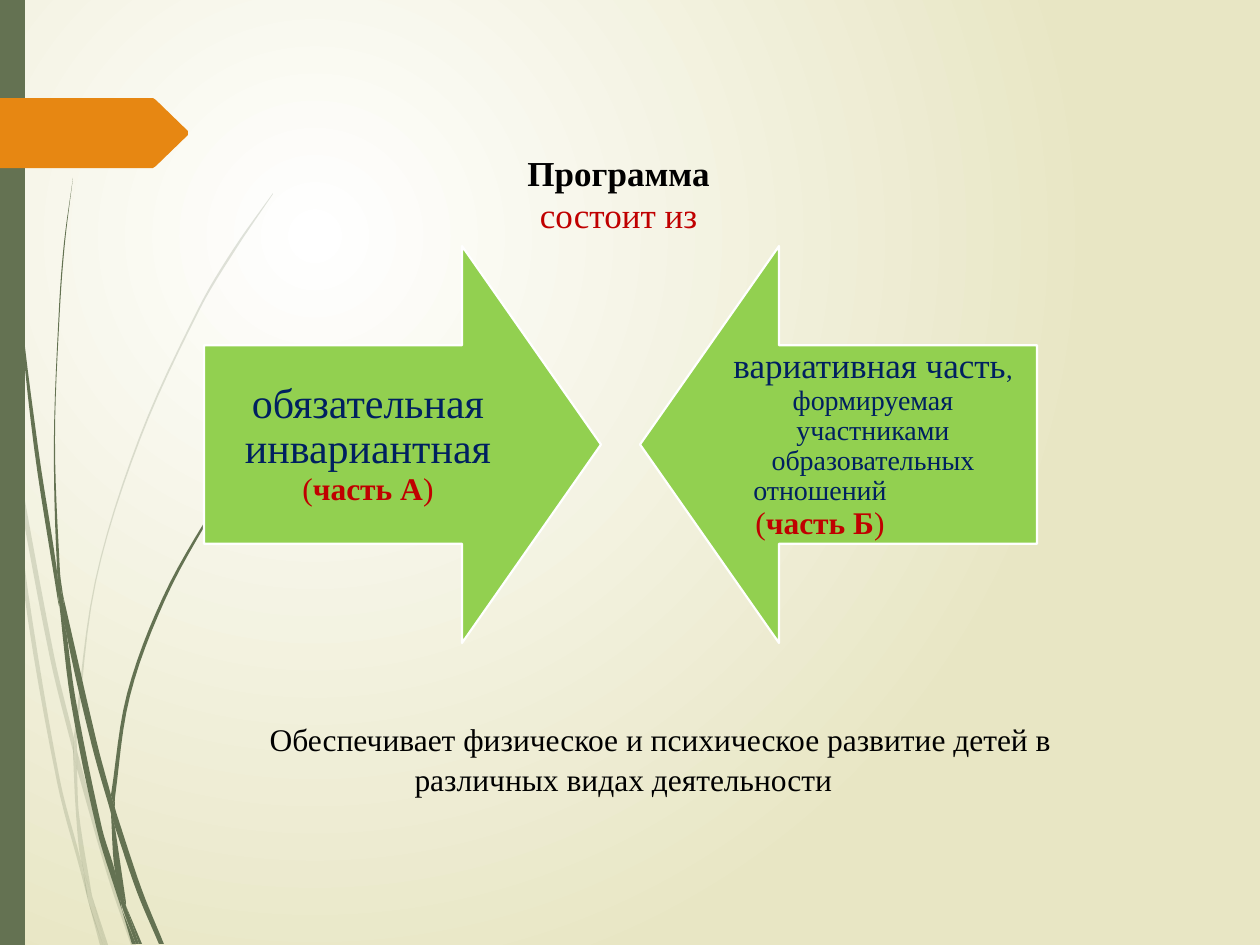
from dataclasses import dataclass
from math import dist

from lxml.etree import SubElement
from pptx import Presentation
from pptx.dml.color import RGBColor
from pptx.enum.shapes import MSO_SHAPE as Shape
from pptx.enum.text import MSO_ANCHOR as Anchor, MSO_AUTO_SIZE as AutoSize, PP_ALIGN as Align
from pptx.oxml.ns import qn
from pptx.util import Emu, Pt

PX_PER_INCH = 126
FONT = "Times New Roman"
COLORS = {
    "olive": "647252", "orange": "E78712", "green": "92D050", "white": "FFFFFF",
    "cream": "E8E6C4", "navy": "002060", "red": "C00000", "black": "000000",
}
Point = tuple[float, float]


@dataclass
class Blade:
    """A piece of grass bounded by two smooth edges, one running down and one up."""
    down: list[Point]
    up: list[Point]


@dataclass
class Run:
    text: str
    size: int
    color: str
    bold: bool = False


@dataclass
class Para:
    runs: list[Run]
    spacing: float = 1.0
    first_indent: int = 0
    right_margin: int = 0


@dataclass
class Arrow:
    left: int
    rotation: int
    text_left: int
    inset: int
    paras: list[Para]


PALE_BLADES = [
    Blade([(10, 441), (8, 406), (0, 355)], [(0, 377), (9, 433), (10, 441)]),
    Blade([(15, 474), (50, 658), (74, 755)], [(74, 738), (54, 655), (13, 435)]),
    Blade([(77, 769), (107, 874), (131, 945)], [(136, 945), (111, 872), (81, 765), (77, 751)]),
    Blade([(92, 896), (105, 945)], [(108, 945)]),
    Blade([(10, 441), (24, 592), (57, 782), (81, 873), (88, 900)],
          [(87, 891), (81, 861), (60, 780), (28, 591), (15, 474)]),
    Blade([(73, 755), (76, 814), (81, 861), (92, 896)], [(91, 890), (79, 814), (77, 769)]),
    Blade([(273, 193), (234, 248), (199, 307), (139, 438), (95, 581), (74, 736)],
          [(77, 751), (77, 736), (96, 582), (140, 440), (200, 309), (236, 249), (273, 194)]),
    Blade([(88, 900), (100, 945)], [(103, 945)]),
    Blade([(73, 755), (77, 769)], [(77, 751), (74, 738)]),
    Blade([(82, 861), (88, 900), (103, 945)], [(105, 945), (92, 896), (84, 872)]),
]
DARK_BLADES = [
    Blade([(3, 0), (6, 139), (18, 294), (34, 447), (58, 601)],
          [(59, 606), (57, 571), (38, 447), (19, 292), (8, 137), (4, 0)]),
    Blade([(63, 595), (67, 636), (92, 746), (111, 813)], [(111, 795), (97, 743), (63, 595)]),
    Blade([(115, 827), (137, 892), (159, 944)], [(164, 944), (142, 890), (118, 818), (115, 808)]),
    Blade([(59, 601), (71, 702), (97, 830), (116, 892), (122, 910)],
          [(121, 903), (115, 871), (102, 828), (76, 701), (67, 636)]),
    Blade([(73, 178), (64, 243), (59, 309), (54, 440), (57, 566), (62, 595)],
          [(63, 595), (60, 571), (55, 440), (60, 309), (65, 243), (73, 178)]),
    Blade([(126, 906), (139, 944)], [(142, 944)]),
    Blade([(57, 566), (59, 601), (67, 636)], [(63, 595), (62, 595)]),
    Blade([(271, 433), (241, 470), (212, 510), (163, 597), (127, 694), (111, 795)],
          [(115, 808), (115, 798), (130, 696), (165, 600), (213, 512), (241, 471), (272, 433)]),
    Blade([(122, 910), (132, 944)], [(136, 944)]),
    Blade([(111, 813), (115, 871), (126, 906)], [(126, 902), (115, 827)]),
    Blade([(111, 795), (111, 813), (115, 827)], [(115, 808)]),
    Blade([(115, 871), (121, 903), (136, 944)], [(139, 944), (126, 906)]),
]
TAG = [(0, 98), (153, 98), (156, 100), (188, 131), (188, 135), (156, 166), (153, 168), (0, 168)]

TITLE = [Para([Run("Программа ", 20, "black", True)]), Para([Run("состоит из ", 20, "red")])]
SUMMARY = [Para([Run("Обеспечивает физическое и психическое развитие детей в "
                     "различных видах деятельности", 18, "black")], 1.07, first_indent=74)]


def part_label(letter: str) -> list[Run]:
    return [Run("(", 18, "red"), Run(f"часть {letter}", 18, "red", True), Run(")", 18, "red")]


ARROWS = [
    Arrow(204, 270, 204, 24, [
        Para([Run("обязательная инвариантная ", 24, "navy"), *part_label("А")], 0.9)]),
    Arrow(640, 90, 709, 20, [
        Para([Run("вариативная часть", 20, "navy"), Run(", ", 15, "navy"),
              Run("формируемая участниками образовательных", 16, "navy")], 0.9),
        Para([Run("отношений", 16, "navy")], 0.9, right_margin=106),
        Para(part_label("Б"), 0.9)]),
]


def px(n: float) -> Emu:
    return Emu(round(n * 914400 / PX_PER_INCH))


def rgb(name: str) -> RGBColor:
    return RGBColor.from_string(COLORS[name])


def smooth(anchors: list[Point], steps: int = 6) -> list[Point]:
    """Points along a curve through the anchors, with tangents taken from their neighbours."""
    def tangent(i: int) -> Point:
        a, b = anchors[max(i - 1, 0)], anchors[min(i + 1, len(anchors) - 1)]
        length = dist(a, b)
        return (b[0] - a[0]) / length, (b[1] - a[1]) / length

    curve = [anchors[0]]
    for i, (a, b) in enumerate(zip(anchors, anchors[1:])):
        chord, ta, tb = dist(a, b), tangent(i), tangent(i + 1)
        for t in (k / steps for k in range(1, steps + 1)):
            wa, wb = 2 * t**3 - 3 * t**2 + 1, 3 * t**2 - 2 * t**3
            va, vb = chord * (t**3 - 2 * t**2 + t), chord * (t**3 - t**2)
            curve.append(tuple(wa * a[d] + wb * b[d] + va * ta[d] + vb * tb[d] for d in (0, 1)))
    return curve


def paint(sp, color: str, alpha: int = 100) -> None:
    sp.shadow.inherit = False
    sp.fill.solid()
    sp.fill.fore_color.rgb = rgb(color)
    sp.line.fill.background()
    if alpha < 100:
        clr = sp.fill._xPr.find(f".//{qn('a:srgbClr')}")
        SubElement(clr, qn("a:alpha"), val=str(alpha * 1000))


def draw_outline(shapes, points: list[Point], color: str, alpha: int = 100) -> None:
    (x, y), *rest = [(px(x), px(y)) for x, y in points]
    builder = shapes.build_freeform(x, y)
    builder.add_line_segments(rest, close=True)
    paint(builder.convert_to_shape(), color, alpha)


def place(sp, left: int, top: int, width: int, height: int) -> None:
    sp.left, sp.top, sp.width, sp.height = map(px, (left, top, width, height))


def write(tf, paras: list[Para]) -> None:
    tf.auto_size = AutoSize.NONE
    for i, para in enumerate(paras):
        p = tf.add_paragraph() if i else tf.paragraphs[0]
        p.alignment, p.line_spacing, p.font.name = Align.CENTER, para.spacing, FONT
        pPr = p._p.get_or_add_pPr()
        if para.first_indent:
            pPr.set("indent", str(px(para.first_indent)))
        if para.right_margin:
            pPr.set("marR", str(px(para.right_margin)))
        for run in para.runs:
            r = p.add_run()
            r.text = run.text
            r.font.name, r.font.size, r.font.bold = FONT, Pt(run.size), run.bold
            r.font.color.rgb = rgb(run.color)


def draw_arrow(shapes, arrow: Arrow) -> None:
    sp = shapes.add_shape(Shape.DOWN_ARROW, px(arrow.left), px(246), px(397), px(397))
    sp.rotation = arrow.rotation
    sp.adjustments[0], sp.adjustments[1] = 0.5, 0.35
    paint(sp, "green")
    sp.line.color.rgb, sp.line.width = rgb("white"), Pt(1.25)
    tf = shapes.add_textbox(px(arrow.text_left), px(345), px(328), px(199)).text_frame
    tf.word_wrap, tf.vertical_anchor = True, Anchor.MIDDLE
    tf.margin_left = tf.margin_right = tf.margin_top = tf.margin_bottom = px(arrow.inset)
    write(tf, arrow.paras)


def fill_background(slide) -> None:
    """Radial gradient centred a quarter of the way in from the top left."""
    fill = slide.background.fill
    fill.gradient()
    for stop, color, position in zip(fill.gradient_stops, ("white", "cream"), (0, 1)):
        stop.color.rgb, stop.position = rgb(color), position
    grad = fill._xPr.find(qn("a:gradFill"))
    grad.remove(grad.find(qn("a:lin")))
    circle = SubElement(grad, qn("a:path"), path="circle")
    SubElement(circle, qn("a:fillToRect"), l="50000", t="50000", r="100000", b="100000")


def main() -> None:
    prs = Presentation()
    prs.slide_width, prs.slide_height = px(1260), px(945)
    slide = prs.slides.add_slide(prs.slide_layouts[5])
    shapes = slide.shapes
    fill_background(slide)

    for blades, alpha in ((PALE_BLADES, 20), (DARK_BLADES, 100)):
        for blade in blades:
            draw_outline(shapes, smooth(blade.down) + smooth(blade.up), "olive", alpha)
    paint(shapes.add_shape(Shape.RECTANGLE, 0, 0, px(25), px(945)), "olive")
    draw_outline(shapes, TAG, "orange")

    summary = shapes.add_textbox(px(147), px(711), px(953), px(89))
    summary.text_frame.word_wrap = True
    write(summary.text_frame, SUMMARY)
    for arrow in ARROWS:
        draw_arrow(shapes, arrow)

    title = shapes.title
    place(title, 514, 145, 218, 97)
    title.text_frame.word_wrap, title.text_frame.vertical_anchor = False, Anchor.TOP
    write(title.text_frame, TITLE)
    prs.save("out.pptx")


if __name__ == "__main__":
    main()
